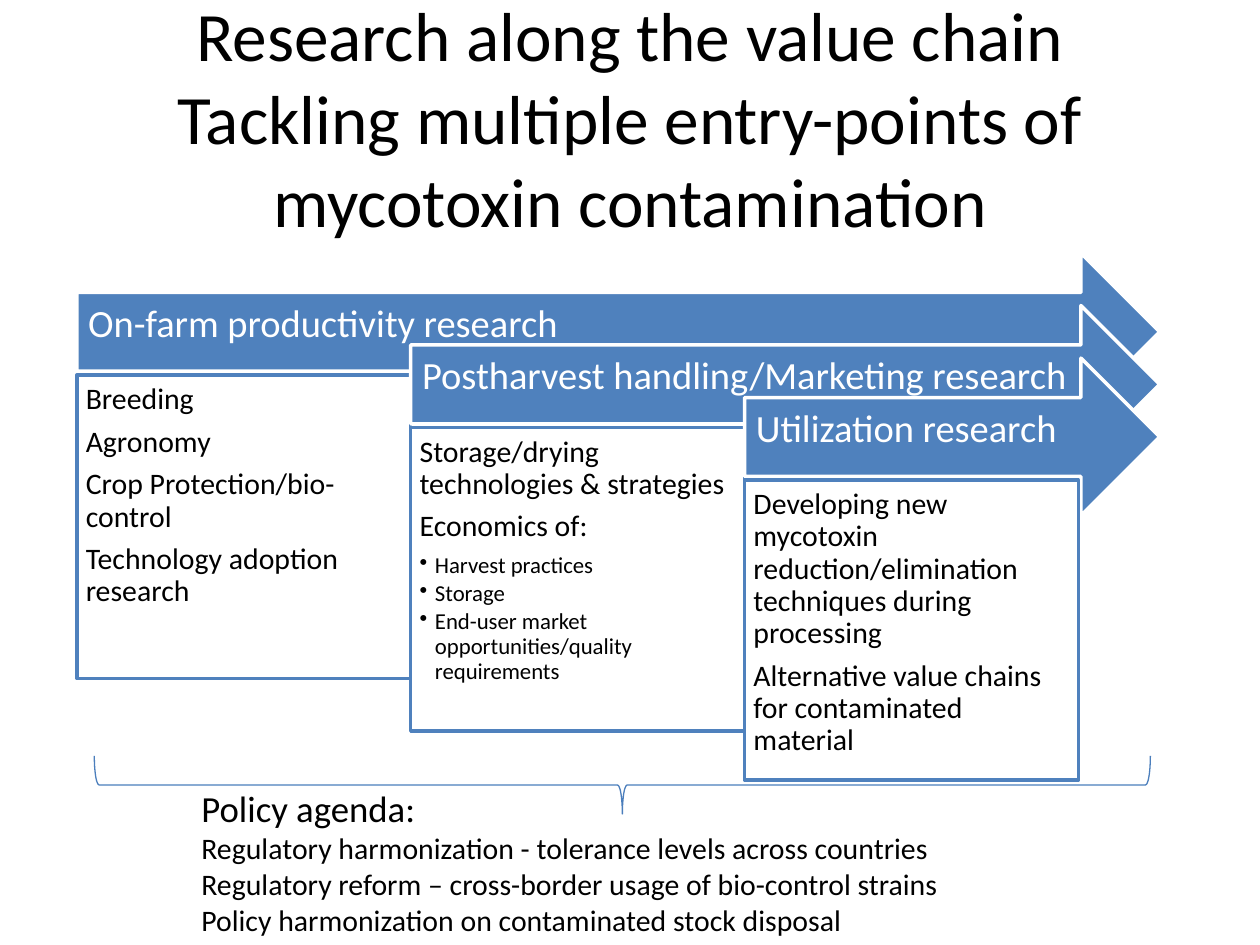
from lxml import etree
from pptx import Presentation
from pptx.dml.color import RGBColor
from pptx.enum.shapes import MSO_SHAPE as Shape
from pptx.enum.text import MSO_ANCHOR as Anchor, MSO_AUTO_SIZE as AutoSize, PP_ALIGN as Align
from pptx.oxml.ns import qn
from pptx.util import Cm, Pt

BLUE = RGBColor(0x4F, 0x81, 0xBD)
BRACE_BLUE = RGBColor(0x4B, 0x7E, 0xBC)
WHITE = RGBColor(0xFF, 0xFF, 0xFF)
BLACK = RGBColor(0, 0, 0)
FONT = "Calibri"

LEFT, TOP = 1.55, 5.1
STEP_X, STEP_Y = 6.73, 1.06
ARROW_END, ARROW_HEIGHT = 23.38, 3.18
BOX_OFFSET = 2.46

STAGES = [
    ("On-farm productivity research", 6.12,
     [("Breeding", 0), ("Agronomy", 0), ("Crop Protection/bio-control", 0),
      ("Technology adoption research", 0)]),
    ("Postharvest handling/Marketing research", 6.12,
     [("Storage/drying technologies & strategies", 0), ("Economics of:", 0),
      ("Harvest practices", 1), ("Storage", 1),
      ("End-user market opportunities/quality requirements", 1)]),
    ("Utilization research", 6.05,
     [("Developing new mycotoxin reduction/elimination techniques during processing", 0),
      ("Alternative value chains for contaminated material", 0)]),
]
POLICY = [
    ("Policy agenda:", 21),
    ("Regulatory harmonization - tolerance levels across countries", 17),
    ("Regulatory reform – cross-border usage of bio-control strains", 17),
    ("Policy harmonization on contaminated stock disposal", 17),
]


def set_font(p, size, color=BLACK):
    p.font.name = FONT
    p.font.size = Pt(size)
    p.font.color.rgb = color


def add_paragraph(tf, text, size, color=BLACK):
    p = tf.paragraphs[0] if not tf.text else tf.add_paragraph()
    p.text = text
    p.alignment = Align.LEFT
    set_font(p, size, color)
    return p


def add_bullet(p):
    pPr = p._p.get_or_add_pPr()
    pPr.set("marL", str(Cm(0.31)))
    pPr.set("indent", str(Cm(-0.31)))
    bullet = etree.Element(qn("a:buChar"), char="•")
    pPr.find(qn("a:spcAft")).addnext(bullet)


def add_shape(s, kind, box, line, width, fill=None):
    sp = s.shapes.add_shape(kind, *map(Cm, box))
    sp.shadow.inherit = False
    if fill is None:
        sp.fill.background()
    else:
        sp.fill.solid()
        sp.fill.fore_color.rgb = fill
    sp.line.color.rgb = line
    sp.line.width = Pt(width)
    return sp


def set_frame(tf, anchor, left, top, right, bottom):
    tf.word_wrap = True
    tf.vertical_anchor = anchor
    tf.margin_left, tf.margin_top = Cm(left), Cm(top)
    tf.margin_right, tf.margin_bottom = Cm(right), Cm(bottom)


def add_title(s):
    sp = s.shapes.title
    sp.left, sp.top, sp.width, sp.height = Cm(1.27), Cm(0.76), Cm(22.86), Cm(3.18)
    tf = sp.text_frame
    tf.text = "Research along the value chain\vTackling multiple entry-points of mycotoxin contamination"
    tf.auto_size = AutoSize.NONE
    tf.vertical_anchor = Anchor.MIDDLE
    p = tf.paragraphs[0]
    p.alignment = Align.CENTER
    set_font(p, 39.6)


def add_arrow(s, x, y, text):
    sp = add_shape(s, Shape.RIGHT_ARROW, (x, y, ARROW_END - x, ARROW_HEIGHT), WHITE, 2, BLUE)
    set_frame(sp.text_frame, Anchor.MIDDLE, 0.23, 0.23, 0.71, 0.51)
    p = add_paragraph(sp.text_frame, text, 22, WHITE)
    p.line_spacing = 0.9


def add_box(s, x, y, height, items):
    sp = add_shape(s, Shape.RECTANGLE, (x, y, STEP_X, height), BLUE, 2, WHITE)
    set_frame(sp.text_frame, Anchor.TOP, 0.18, 0.18, 0.18, 0.18)
    for text, level in items:
        p = add_paragraph(sp.text_frame, text, 13 if level else 17)
        p.level = level
        p.line_spacing = 0.9
        p.space_after = Pt(2 if level else 6)
        if level:
            add_bullet(p)


def add_brace(s):
    sp = add_shape(s, Shape.RIGHT_BRACE, (11.96, 5.18, 1.17, 21.29), BRACE_BLUE, 0.75)
    sp.rotation = 90


def add_policy(s):
    tf = s.shapes.add_textbox(Cm(3.81), Cm(15.72), Cm(15.47), Cm(4.09)).text_frame
    tf.word_wrap = False
    for text, size in POLICY:
        add_paragraph(tf, text, size)


def main():
    prs = Presentation()
    prs.slide_width, prs.slide_height = Cm(25.4), Cm(19.05)
    s = prs.slides.add_slide(prs.slide_layouts[5])
    add_title(s)
    for i, (heading, height, items) in enumerate(STAGES):
        x, y = LEFT + i * STEP_X, TOP + i * STEP_Y
        add_arrow(s, x, y, heading)
        add_box(s, x, y + BOX_OFFSET, height, items)
    add_brace(s)
    add_policy(s)
    prs.save("out.pptx")


if __name__ == "__main__":
    main()
